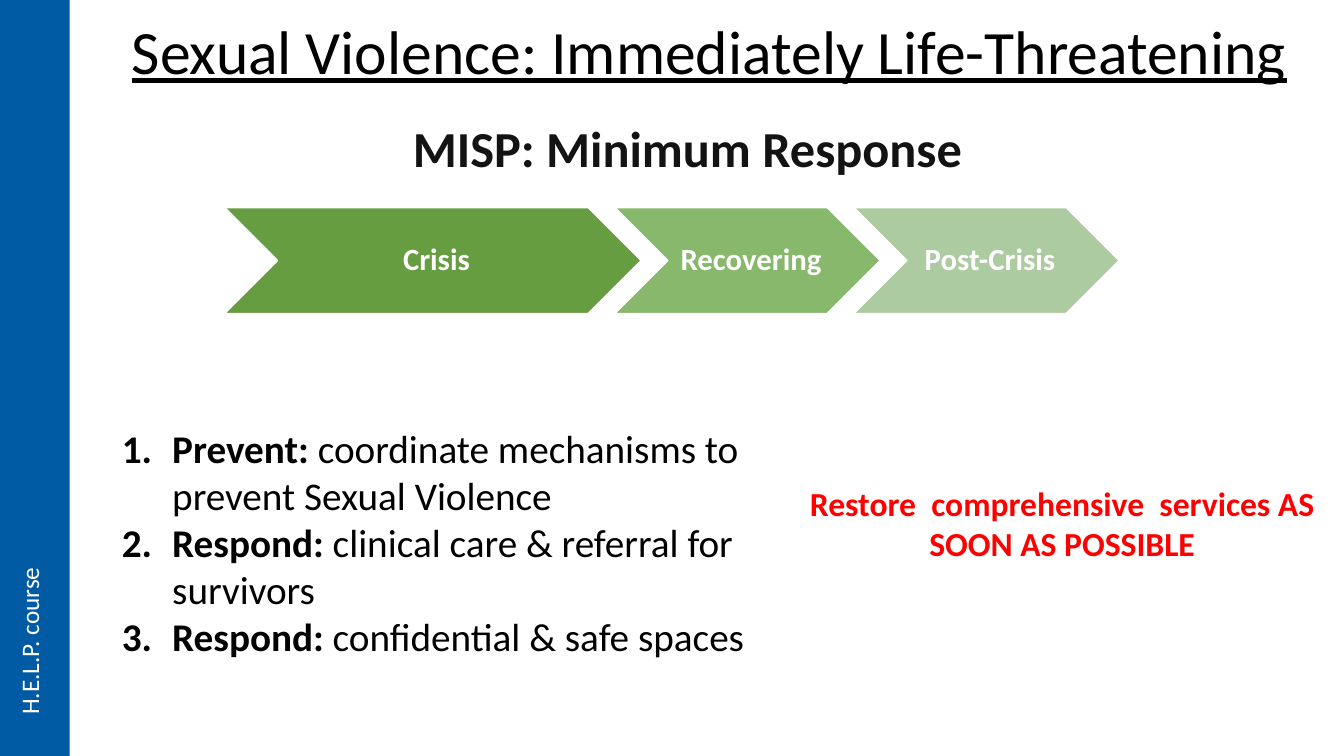
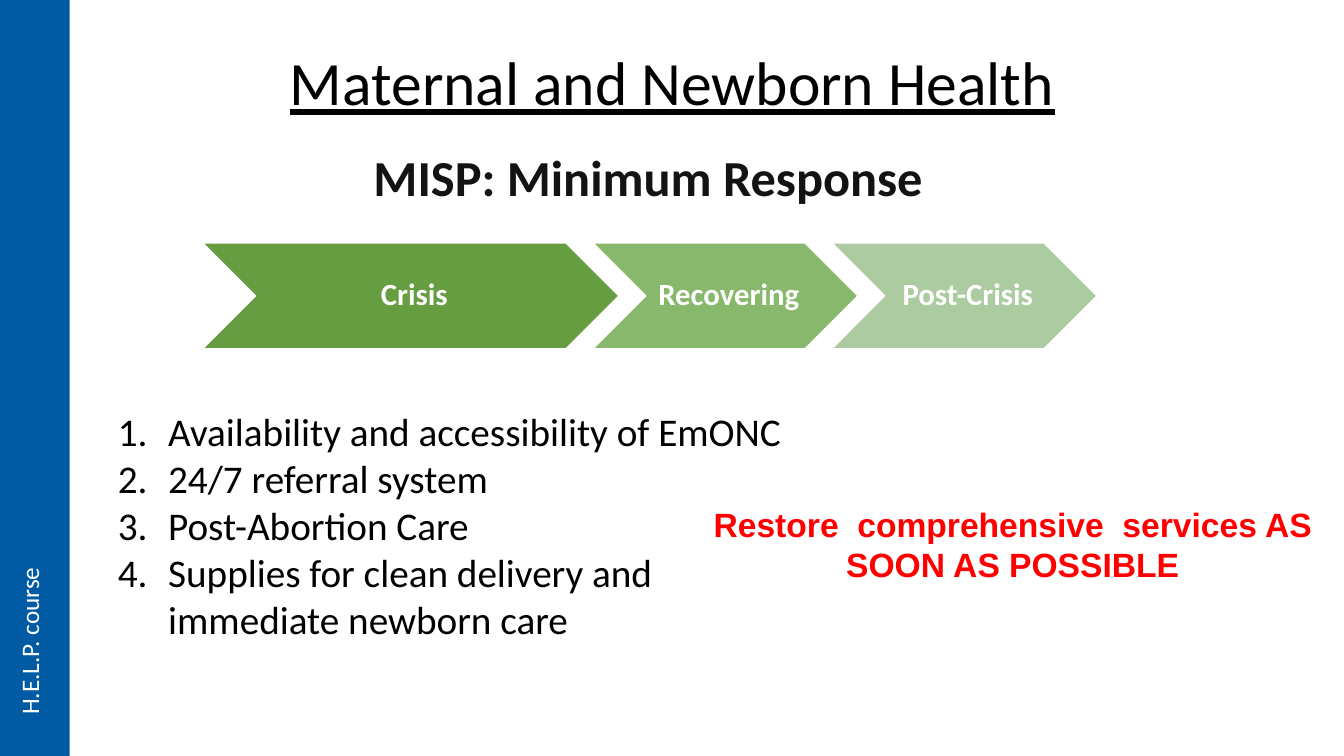
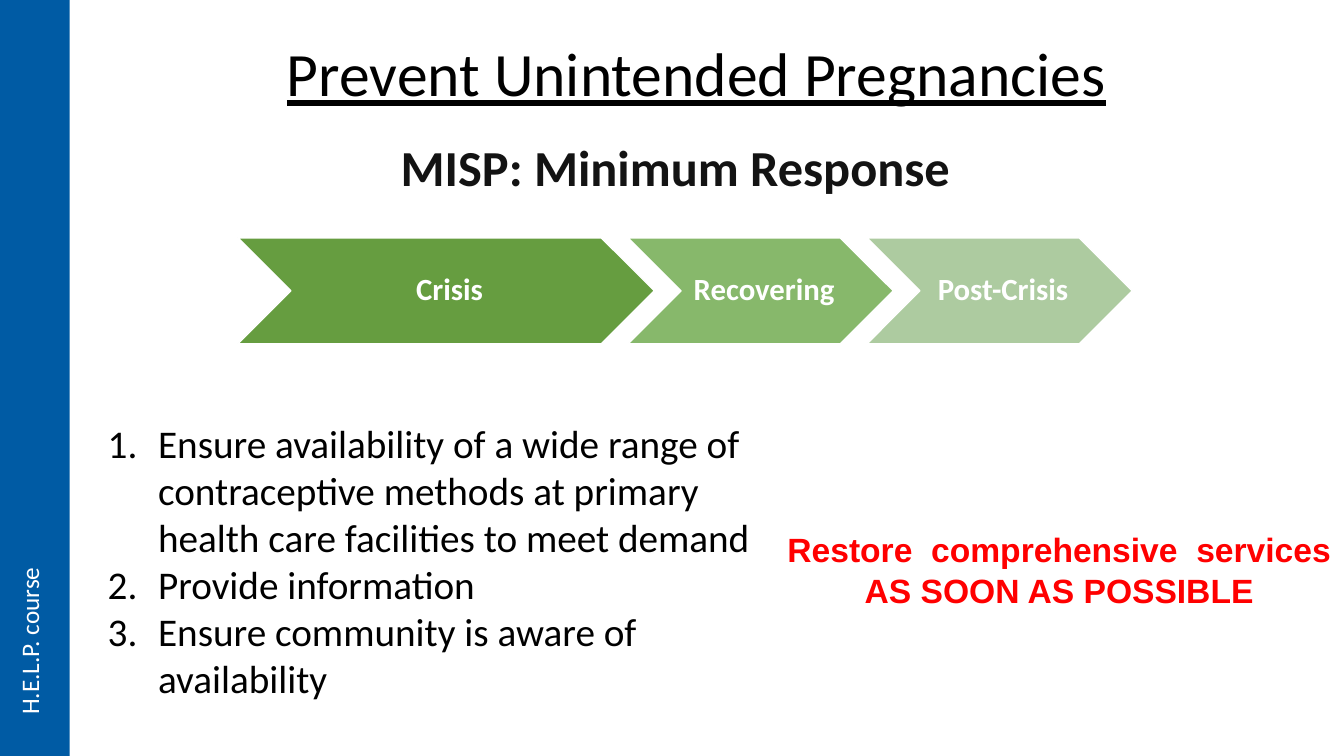
from dataclasses import dataclass

from lxml import etree
from pptx import Presentation
from pptx.dml.color import RGBColor
from pptx.enum.shapes import MSO_SHAPE
from pptx.enum.text import MSO_ANCHOR, MSO_AUTO_SIZE, PP_ALIGN
from pptx.oxml.ns import qn
from pptx.util import Inches, Pt

CHEVRON, RECT = MSO_SHAPE.CHEVRON, MSO_SHAPE.RECTANGLE
CENTER, LEFT = PP_ALIGN.CENTER, PP_ALIGN.LEFT
TOP, MIDDLE = MSO_ANCHOR.TOP, MSO_ANCHOR.MIDDLE
NO_FIT = MSO_AUTO_SIZE.NONE

Area = tuple[float, float, float, float]
Spot = tuple[float, float]


@dataclass(frozen=True)
class Style:
    size: int
    color: str
    bold: bool = False
    line: bool = False
    face: str = "Calibri"


@dataclass(frozen=True)
class Stage:
    name: str
    width: float
    fill: str


@dataclass(frozen=True)
class Item:
    text: str
    lead: str = ""


@dataclass(frozen=True)
class Page:
    title: str
    top: Area
    head: Spot
    flow: Spot
    list: Area
    items: tuple[Item, ...]
    note: Area
    face: str = "Arial"


# Shared look
BLUE, WHITE, BLACK, RED = "005BA4", "FFFFFF", "000000", "FF0000"
TITLE = Style(44, BLACK, line=True)
HEAD = Style(36, "131313", bold=True)
BODY = Style(28, BLACK)
STEP = Style(22, WHITE, bold=True)
SIDE = Style(18, WHITE)

COURSE = "H.E.L.P. course"
LABEL = "MISP: Minimum Response"
NOTE = "Restore  comprehensive  services AS SOON AS POSSIBLE"

STAGES = (
    Stage("Crisis", 4.13, "669D40"),
    Stage("Recovering", 2.63, "87B86B"),
    Stage("Post-Crisis", 2.63, "ADCBA0"),
)
HIGH = 1.05
LAP = 0.26
INDENT = 0.5

PAGES = (
    Page(
        "Sexual Violence: Immediately Life-Threatening",
        (1.01, 0.16, 12.06, 1.91), (2.23, 1.11), (2.23, 2.06),
        (1.11, 4.16, 6.72, 2.46),
        (
            Item("coordinate mechanisms to prevent Sexual Violence", "Prevent: "),
            Item(" clinical care & referral for survivors", "Respond:"),
            Item(" confidential & safe spaces", "Respond:"),
        ),
        (7.83, 4.74, 5.41, 0.91), "Calibri",
    ),
    Page(
        "Maternal and Newborn Health",
        (1.67, 0.47, 10, 0.93), (1.84, 1.4), (2.01, 2.41),
        (1.07, 3.99, 7.04, 2.46),
        (
            Item("Availability and accessibility of EmONC"),
            Item("24/7 referral system"),
            Item("Post-Abortion Care"),
            Item("Supplies for clean delivery and immediate newborn care"),
        ),
        (6.86, 4.95, 6.37, 0.91),
    ),
    Page(
        "Prevent Unintended Pregnancies",
        (1.91, 0.38, 10, 0.93), (2.11, 1.3), (2.36, 2.36),
        (0.97, 4.11, 6.87, 3.3),
        (
            Item("Ensure availability of a wide range of contraceptive methods "
                 "at primary health care facilities to meet demand"),
            Item("Provide information"),
            Item("Ensure community is aware of availability"),
        ),
        (7.61, 5.2, 5.79, 0.91),
    ),
)


def rgb(code: str) -> RGBColor:
    return RGBColor.from_string(code)


def dress(para, style: Style, align=CENTER) -> None:
    para.alignment = align
    font = para.font
    font.name, font.size = style.face, Pt(style.size)
    font.bold, font.underline = style.bold, style.line
    font.color.rgb = rgb(style.color)


def add_box(slide, area: Area, text: str, style: Style, align=CENTER):
    box = slide.shapes.add_textbox(*map(Inches, area))
    frame = box.text_frame
    frame.word_wrap = True
    frame.text = text
    dress(frame.paragraphs[0], style, align)
    return box


def add_block(slide, kind, area: Area, fill: str):
    block = slide.shapes.add_shape(kind, *map(Inches, area))
    block.shadow.inherit = False
    block.fill.solid()
    block.fill.fore_color.rgb = rgb(fill)
    block.line.fill.background()
    return block


def add_title(slide, text: str, area: Area) -> None:
    title = slide.shapes.title
    title.left, title.top, title.width, title.height = map(Inches, area)
    frame = title.text_frame
    frame.text = text
    frame.word_wrap = True
    frame.auto_size = NO_FIT
    frame.vertical_anchor = TOP
    para = frame.paragraphs[0]
    para.line_spacing = 0.9
    dress(para, TITLE)


def add_flow(slide, spot: Spot) -> None:
    left, top = spot
    for stage in STAGES:
        step = add_block(slide, CHEVRON, (left, top, stage.width, HIGH), stage.fill)
        step.line.color.rgb = rgb(WHITE)
        step.line.width = Pt(1)
        frame = step.text_frame
        frame.word_wrap = True
        frame.vertical_anchor = MIDDLE
        frame.margin_left = Inches(0.1)
        frame.margin_right = frame.margin_top = frame.margin_bottom = Inches(0.03)
        frame.text = stage.name
        para = frame.paragraphs[0]
        para.line_spacing = 0.9
        dress(para, STEP)
        left += stage.width - LAP


def add_list(slide, area: Area, items: tuple[Item, ...]) -> None:
    box = slide.shapes.add_textbox(*map(Inches, area))
    frame = box.text_frame
    frame.word_wrap = True
    for i, item in enumerate(items):
        para = frame.add_paragraph() if i else frame.paragraphs[0]
        # Automatic number with a hanging indent
        props = para._p.get_or_add_pPr()
        props.set("marL", str(Inches(INDENT)))
        props.set("indent", str(-Inches(INDENT)))
        etree.SubElement(props, qn("a:buFont"), typeface="+mj-lt")
        etree.SubElement(props, qn("a:buAutoNum"), type="arabicPeriod")
        dress(para, BODY, LEFT)
        if item.lead:
            run = para.add_run()
            run.text = item.lead
            run.font.bold = True
        para.add_run().text = item.text


def set_band(slide) -> None:
    """Move the side band and its label to the slide's layout."""
    layout = slide.slide_layout
    for holder in list(layout.placeholders):
        if holder.placeholder_format.idx:
            layout.placeholders.element.remove(holder.element)
    band = add_block(slide, RECT, (0, 0, 0.69, 7.5), BLUE)
    label = add_box(slide, (0.09, 5.61, 0.5, 1.58), COURSE, SIDE, LEFT)
    label.text_frame.word_wrap = False
    label.text_frame._txBody.bodyPr.set("vert", "vert270")
    for part in (band, label):
        layout.shapes.element.append(part.element)


def add_page(deck, page: Page):
    slide = deck.slides.add_slide(deck.slide_layouts[5])
    add_title(slide, page.title, page.top)
    add_box(slide, (*page.head, 9.18, 0.71), LABEL, HEAD)
    add_flow(slide, page.flow)
    add_list(slide, page.list, page.items)
    add_box(slide, page.note, NOTE, Style(24, RED, bold=True, face=page.face))
    return slide


def main() -> None:
    deck = Presentation()
    deck.slide_width, deck.slide_height = Inches(13.33), Inches(7.5)
    slides = [add_page(deck, page) for page in PAGES]
    set_band(slides[0])
    deck.save("out.pptx")


if __name__ == "__main__":
    main()
